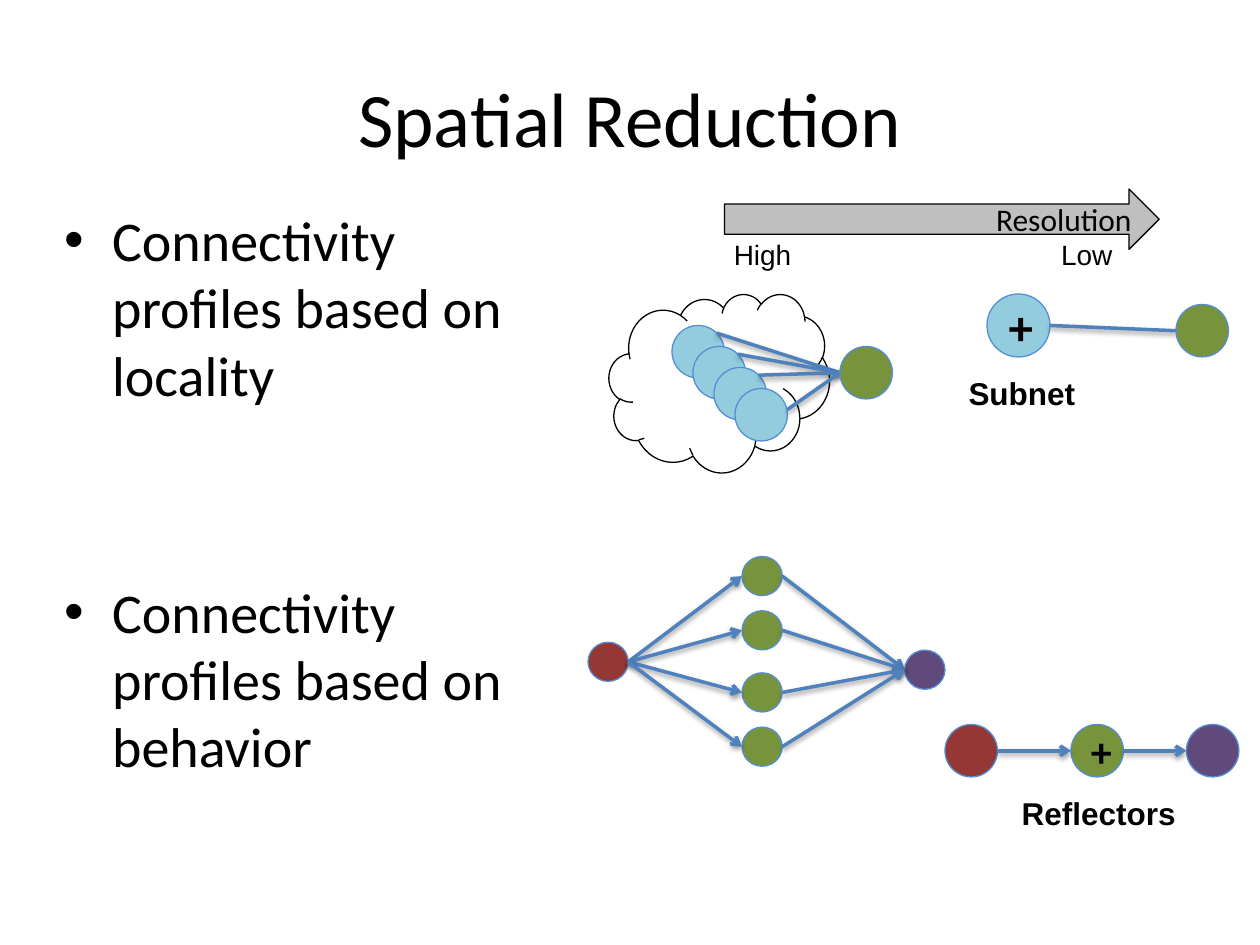
from lxml import etree
from pptx import Presentation
from pptx.dml.color import RGBColor
from pptx.enum.shapes import MSO_CONNECTOR, MSO_SHAPE
from pptx.enum.text import MSO_ANCHOR, PP_ALIGN
from pptx.oxml.ns import qn
from pptx.util import Pt

CLOUD, OVAL, ARROW = MSO_SHAPE.CLOUD, MSO_SHAPE.OVAL, MSO_SHAPE.RIGHT_ARROW
STRAIGHT = MSO_CONNECTOR.STRAIGHT
LEFT, CENTER = PP_ALIGN.LEFT, PP_ALIGN.CENTER
RIGHT, JUSTIFY = PP_ALIGN.RIGHT, PP_ALIGN.JUSTIFY
TOP, MIDDLE = MSO_ANCHOR.TOP, MSO_ANCHOR.MIDDLE

BLACK, GREY, EDGE, LINK = "000000", "BFBFBF", "558ED5", "4F81BD"
CYAN, GREEN, RED, PURPLE = "93CDDD", "77933C", "953735", "604A7B"
NODE = 30
SMALL_W, SMALL_H = 23, 22.4


def color(value):
    return RGBColor.from_string(value)


def write(tf, text, size=18, font="Calibri", bold=False, align=CENTER,
          anchor=TOP, wrap=True, bullet=False, gap=0):
    tf.word_wrap = wrap
    tf.vertical_anchor = anchor
    for i, line in enumerate(text.split("\n")):
        p = tf.paragraphs[0] if i == 0 else tf.add_paragraph()
        p.alignment = align
        if i:
            p.space_before = Pt(gap)
        if bullet:
            pPr = p._p.get_or_add_pPr()
            pPr.set("marL", str(Pt(27)))
            pPr.set("indent", str(Pt(-27)))
            etree.SubElement(pPr, qn("a:buFont"), typeface="Arial")
            etree.SubElement(pPr, qn("a:buChar"), char="•")
        r = p.add_run()
        r.text = line
        r.font.name, r.font.size, r.font.bold = font, Pt(size), bold
        r.font.color.rgb = color(BLACK)


def text_box(shapes, x, y, w, h, text, **fmt):
    box = shapes.add_textbox(Pt(x), Pt(y), Pt(w), Pt(h))
    write(box.text_frame, text, **fmt)


def shape(shapes, kind, x, y, w, h, fill=None, edge=EDGE, text=None, **fmt):
    sp = shapes.add_shape(kind, Pt(x), Pt(y), Pt(w), Pt(h))
    sp.shadow.inherit = False
    if fill:
        sp.fill.solid()
        sp.fill.fore_color.rgb = color(fill)
    else:
        sp.fill.background()
    sp.line.color.rgb = color(edge)
    sp.line.width = Pt(0.75)
    if text:
        write(sp.text_frame, text, anchor=MIDDLE, **fmt)


def node(shapes, x, y, fill, w=NODE, h=None, **fmt):
    shape(shapes, OVAL, x, y, w, h or w, fill, **fmt)


def link(shapes, x1, y1, x2, y2, arrow=False):
    c = shapes.add_connector(STRAIGHT, Pt(x1), Pt(y1), Pt(x2), Pt(y2))
    c.line.color.rgb = color(LINK)
    c.line.width = Pt(2)
    if arrow:
        etree.SubElement(c.line._get_or_add_ln(), qn("a:tailEnd"), type="arrow")
    effects = etree.SubElement(c._element.spPr, qn("a:effectLst"))
    shadow = etree.SubElement(effects, qn("a:outerShdw"), blurRad=str(Pt(3.1)),
                              dist=str(Pt(1.6)), dir="5400000", rotWithShape="0")
    black = etree.SubElement(shadow, qn("a:srgbClr"), val=BLACK)
    etree.SubElement(black, qn("a:alpha"), val="38000")


def draw_hosts(shapes):
    for i in range(4):
        node(shapes, 384 + 12 * i, 186 + 12 * i, CYAN)
    for i in range(3):
        link(shapes, 409.6 + 12 * i, 190.4 + 12 * i, 480, 213)
    link(shapes, 450, 234, 480, 213)
    node(shapes, 480, 198, GREEN)


def draw_subnet(shapes):
    node(shapes, 564, 168, CYAN, w=36, text="+", size=28, bold=True, align=JUSTIFY)
    link(shapes, 600, 186, 672, 189)
    node(shapes, 672, 174, GREEN)


def draw_paths(shapes):
    rows = (318, 349, 384.5, 415.5)
    for y in rows:
        node(shapes, 424, y, GREEN, SMALL_W, SMALL_H)
    node(shapes, 517, 371.5, PURPLE, SMALL_W, SMALL_H)
    node(shapes, 336, 367, RED, SMALL_W, SMALL_H)
    for y in rows:
        mid = y + SMALL_H / 2
        link(shapes, 336 + SMALL_W, 378.2, 424, mid, arrow=True)
        link(shapes, 424 + SMALL_W, mid, 517, 382.7, arrow=True)


def draw_reflectors(shapes):
    node(shapes, 612, 414, GREEN, text="+", size=24, bold=True)
    node(shapes, 678, 414, PURPLE)
    node(shapes, 540, 414, RED)
    for x1, x2 in ((540, 612), (612, 678)):
        link(shapes, x1 + NODE, 429, x2, 429, arrow=True)


def main():
    prs = Presentation()
    prs.slide_width, prs.slide_height = Pt(720), Pt(540)
    s = prs.slides.add_slide(prs.slide_layouts[6]).shapes

    shape(s, CLOUD, 348, 168, 126, 102, edge=BLACK)
    text_box(s, 30, 114, 288, 330,
             "Connectivity profiles based on locality\n"
             "Connectivity profiles based on behavior",
             size=32, align=LEFT, bullet=True, gap=97)
    text_box(s, 36, 21.6, 648, 90, "Spatial Reduction", size=44, anchor=MIDDLE)

    draw_hosts(s.add_group_shape().shapes)
    draw_subnet(s.add_group_shape().shapes)
    shape(s, ARROW, 414, 108, 248.4, 34.5, GREY, BLACK, text="Resolution", align=RIGHT)
    draw_paths(s.add_group_shape().shapes)
    draw_reflectors(s.add_group_shape().shapes)

    for x, y, w, h, text, size, bold in (
            (412, 132, 47.5, 26.6, "High", 16, False),
            (599, 132, 44, 26.6, "Low", 16, False),
            (545.8, 210, 76.3, 28.8, "Subnet", 18, True),
            (576, 450, 103.7, 28.8, "Reflectors", 18, True)):
        text_box(s, x, y, w, h, text, size=size, bold=bold, font="Arial", wrap=False)

    prs.save("out.pptx")


if __name__ == "__main__":
    main()
